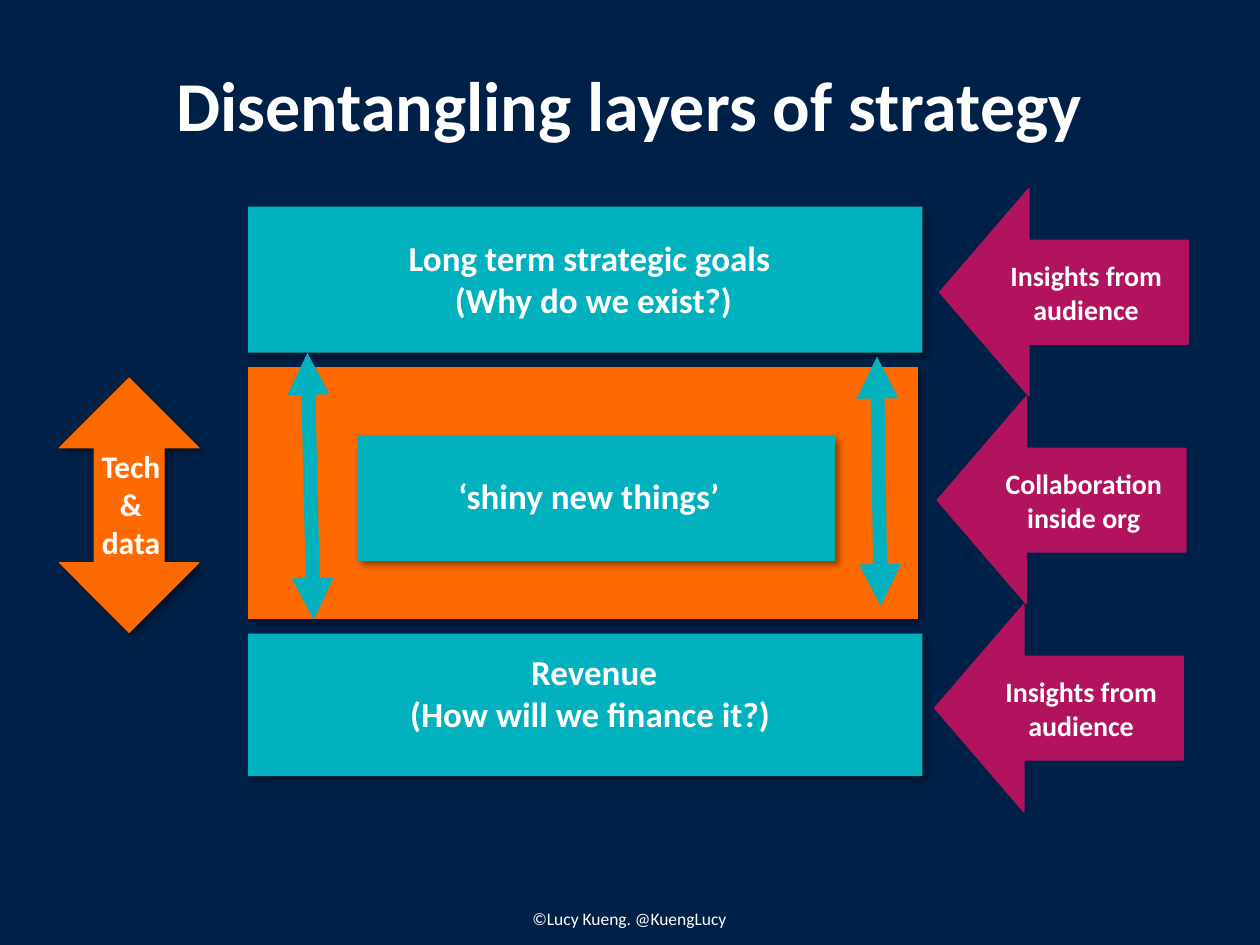
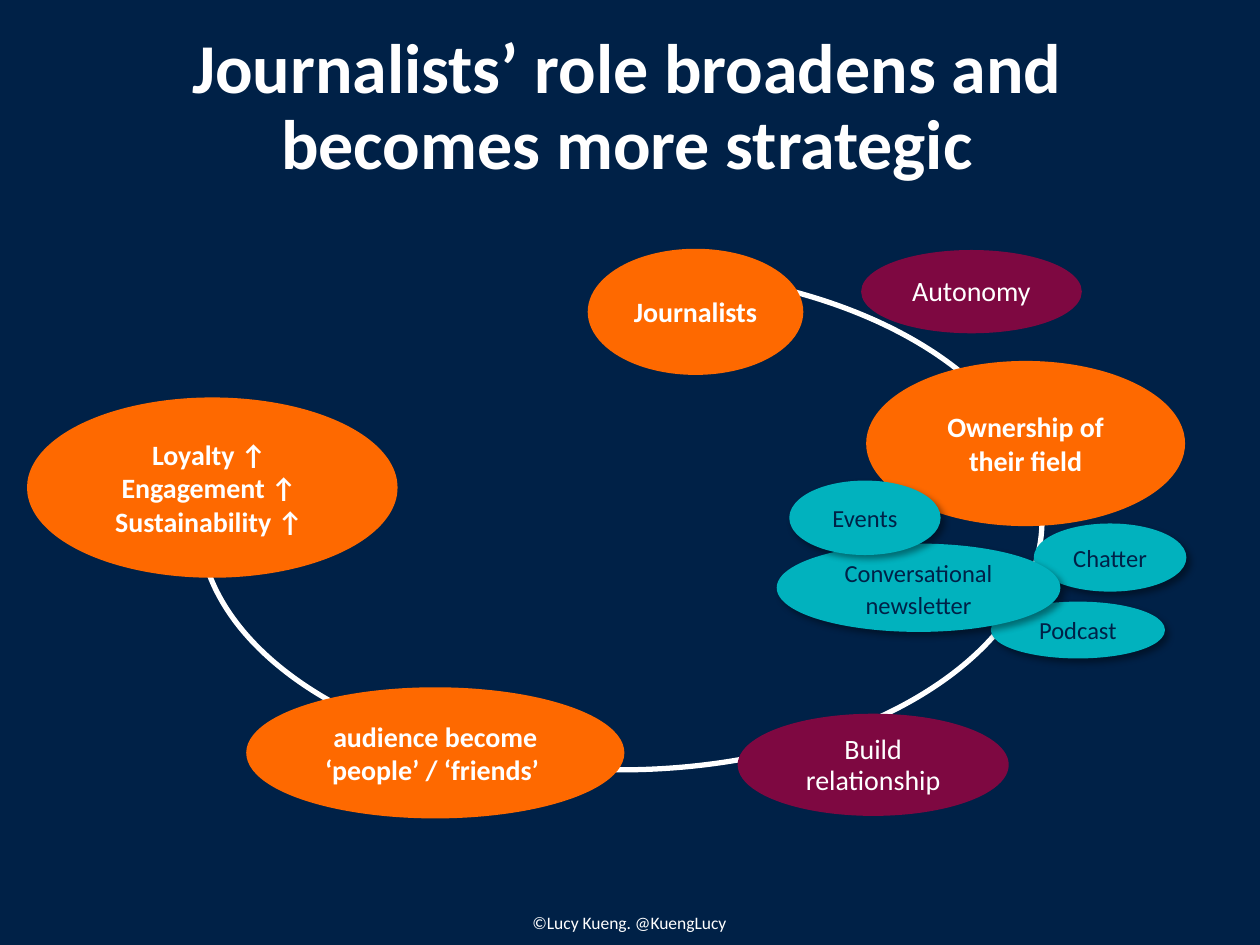
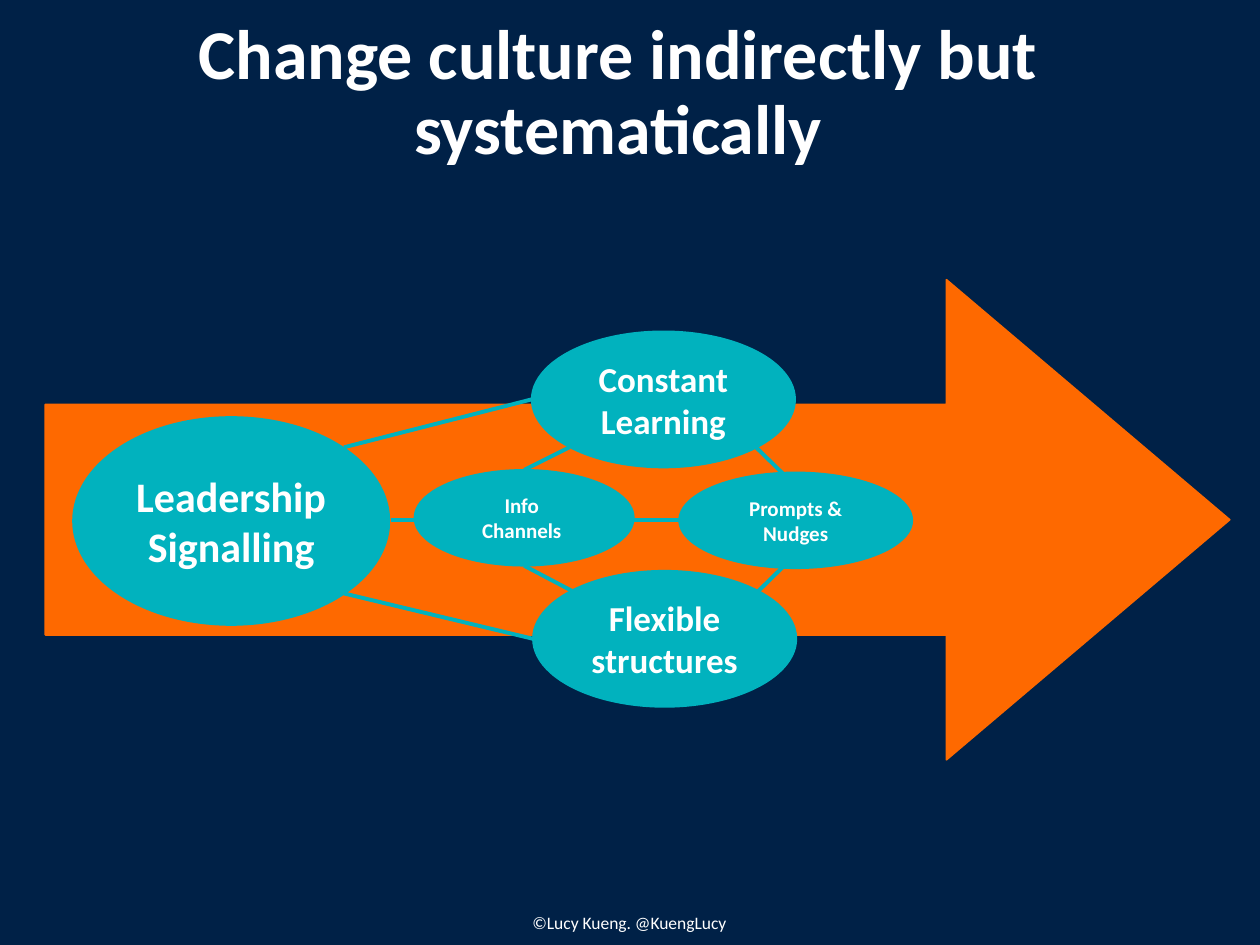
from dataclasses import dataclass
from typing import NamedTuple, Optional, Union

from lxml.etree import SubElement
from pptx import Presentation
from pptx.dml.color import RGBColor
from pptx.enum.shapes import MSO_CONNECTOR, MSO_SHAPE
from pptx.enum.text import MSO_ANCHOR, MSO_AUTO_SIZE, PP_ALIGN
from pptx.oxml.ns import qn
from pptx.shapes.autoshape import Shape
from pptx.slide import Slide
from pptx.text.text import TextFrame
from pptx.util import Inches, Length, Pt

NAVY = RGBColor(0x00, 0x21, 0x47)
WHITE = RGBColor(0xFF, 0xFF, 0xFF)
ORANGE = RGBColor(0xFE, 0x69, 0x00)
TEAL = RGBColor(0x01, 0xB2, 0xBE)
MAGENTA = RGBColor(0xB2, 0x13, 0x5F)
PLUM = RGBColor(0x7E, 0x08, 0x41)

FONT = "Calibri"
SLIDE_WIDTH, SLIDE_HEIGHT = Inches(10), Inches(7.5)
CELL = SLIDE_WIDTH // 100
ARC_DEGREE = 0.6
FOOTER = "©Lucy Kueng. @KuengLucy"


class Box(NamedTuple):
    """A place on the grid of 100 columns and 75 rows."""

    column: float
    row: float
    columns: float
    rows: float

    def lengths(self) -> tuple[int, ...]:
        """Return left, top, width and height as slide lengths."""
        return tuple(round(value * CELL) for value in self)


class Link(NamedTuple):
    """A straight line between two grid points."""

    start_column: float
    start_row: float
    end_column: float
    end_row: float


@dataclass(frozen=True)
class TextStyle:
    """The look of a block of centred text."""

    size: float
    bold: bool = True
    color: RGBColor = WHITE
    spacing: Optional[Union[float, Length]] = None


@dataclass(frozen=True)
class ShapeStyle:
    """The fill, outline and shadow of a preset shape."""

    fill: RGBColor
    line_width: float = 0
    shadow: bool = False


@dataclass(frozen=True)
class Node:
    """A preset shape with its place, look and text."""

    box: Box
    style: ShapeStyle
    lines: tuple[str, ...] = ()
    text: TextStyle = TextStyle(16)
    preset: MSO_SHAPE = MSO_SHAPE.OVAL
    adjustments: tuple[float, ...] = ()


TITLE_TEXT = TextStyle(40, spacing=0.9)
FOOTER_TEXT = TextStyle(10, bold=False)
LAYER_TEXT = TextStyle(20)
ROLE_TEXT = TextStyle(16, bold=False, spacing=Pt(18))
CHANNEL_TEXT = TextStyle(14, bold=False, color=NAVY)
NEWSLETTER_TEXT = TextStyle(14, bold=False, color=NAVY, spacing=Pt(18))

ORANGE_LAYER = ShapeStyle(ORANGE, 0.5, shadow=True)
TEAL_LAYER = ShapeStyle(TEAL, shadow=True)
TEAL_INSET = ShapeStyle(TEAL, 0.5, shadow=True)
INSIGHT = ShapeStyle(MAGENTA, 1)
STAGE = ShapeStyle(ORANGE, 2.25)
ROLE = ShapeStyle(PLUM, 2.25)
CHANNEL = ShapeStyle(TEAL, 2.25, shadow=True)
DIRECTION = ShapeStyle(ORANGE, 1)
LEVER = ShapeStyle(TEAL, 1)


def write_text(frame: TextFrame, lines: tuple[str, ...], style: TextStyle) -> None:
    """Write each line as a centred paragraph."""
    for index, line in enumerate(lines):
        paragraph = frame.add_paragraph() if index else frame.paragraphs[0]
        paragraph.alignment = PP_ALIGN.CENTER
        if style.spacing is not None:
            paragraph.line_spacing = style.spacing
        run = paragraph.add_run()
        run.text = line
        run.font.name = FONT
        run.font.size = Pt(style.size)
        run.font.bold = style.bold
        run.font.color.rgb = style.color


def add_shadow(shape: Shape) -> None:
    """Cast a soft black shadow to the lower right."""
    effects = shape._element.spPr.find(qn("a:effectLst"))
    shadow = SubElement(effects, qn("a:outerShdw"), blurRad=str(Pt(4)), dist=str(Pt(3)),
                        dir="2700000", algn="tl", rotWithShape="0")
    color = SubElement(shadow, qn("a:srgbClr"), val="000000")
    SubElement(color, qn("a:alpha"), val="40000")


def add_node(slide: Slide, node: Node) -> None:
    """Draw a preset shape and its text."""
    shape = slide.shapes.add_shape(node.preset, *node.box.lengths())
    for index, value in enumerate(node.adjustments):
        shape.adjustments[index] = value
    shape.shadow.inherit = False
    shape.fill.solid()
    shape.fill.fore_color.rgb = node.style.fill
    if node.style.line_width:
        shape.line.color.rgb = node.style.fill
        shape.line.width = Pt(node.style.line_width)
    else:
        shape.line.fill.background()
    if node.style.shadow:
        add_shadow(shape)
    shape.text_frame.vertical_anchor = MSO_ANCHOR.MIDDLE
    write_text(shape.text_frame, node.lines, node.text)


def add_label(slide: Slide, box: Box, lines: tuple[str, ...], style: TextStyle,
              wrap: bool = True) -> None:
    """Place a text box."""
    frame = slide.shapes.add_textbox(*box.lengths()).text_frame
    frame.word_wrap = wrap
    write_text(frame, lines, style)


def add_link(slide: Slide, link: Link, width: float, arrows: bool = False) -> None:
    """Draw a teal line, with arrowheads at both ends if asked."""
    ends = (round(value * CELL) for value in link)
    connector = slide.shapes.add_connector(MSO_CONNECTOR.STRAIGHT, *ends)
    connector.line.color.rgb = TEAL
    connector.line.width = Pt(width)
    if arrows:
        outline = connector.line._get_or_add_ln()
        for end in ("a:headEnd", "a:tailEnd"):
            SubElement(outline, qn(end), type="triangle")
    SubElement(connector._element.spPr, qn("a:effectLst"))


def start_slide(presentation: Presentation, title: str, box: Box, footer_row: float = 71.9,
                anchor: MSO_ANCHOR = MSO_ANCHOR.MIDDLE) -> Slide:
    """Add a slide with its title and footer."""
    slide = presentation.slides.add_slide(presentation.slide_layouts.get_by_name("Title Only"))
    heading = slide.shapes.title
    heading.left, heading.top, heading.width, heading.height = box.lengths()
    frame = heading.text_frame
    frame.auto_size = MSO_AUTO_SIZE.NONE
    frame.word_wrap = True
    frame.vertical_anchor = anchor
    write_text(frame, (title,), TITLE_TEXT)
    add_label(slide, Box(41.1, footer_row, 17.7, 2.7), (FOOTER,), FOOTER_TEXT, wrap=False)
    return slide


def build_layers(presentation: Presentation) -> None:
    """Show the strategy layers and what feeds them."""
    slide = start_slide(presentation, "Disentangling layers of strategy",
                        Box(4.4, 4.4, 91.1, 8.5), footer_row=71.6)
    layers = (
        Node(Box(4.7, 30, 11.1, 20.2), ORANGE_LAYER, preset=MSO_SHAPE.UP_DOWN_ARROW),
        Node(Box(19.7, 29.2, 53.1, 19.9), ORANGE_LAYER, preset=MSO_SHAPE.RECTANGLE),
        Node(Box(19.7, 16.4, 53.5, 11.6), TEAL_LAYER, preset=MSO_SHAPE.RECTANGLE),
        Node(Box(28.4, 34.6, 37.8, 9.9), TEAL_INSET, preset=MSO_SHAPE.RECTANGLE),
        Node(Box(19.7, 50.3, 53.5, 11.3), TEAL_LAYER, preset=MSO_SHAPE.RECTANGLE),
    )
    for layer in layers:
        add_node(slide, layer)
    labels = (
        (Box(17.9, 18.3, 58.4, 7.7), ("Long term strategic goals ", "(Why do we exist?)"), LAYER_TEXT),
        (Box(21, 37.2, 52.1, 4.4), ("‘shiny new things’ ",), LAYER_TEXT),
        (Box(18, 51.1, 58.3, 7.7), ("Revenue", "(How will we finance it?) "), LAYER_TEXT),
        (Box(4.5, 35, 11.8, 10.1), ("Tech", "&", "data"), TextStyle(18)),
    )
    for box, lines, style in labels:
        add_label(slide, box, lines, style)
    for link in (Link(24.4, 28, 24.9, 49.2), Link(69.6, 28.3, 69.9, 48.1)):
        add_link(slide, link, 8, arrows=True)
    insights = ("Insights from audience", "Collaboration inside org", "Insights from audience")
    for index, insight in enumerate(insights):
        box = Box(74.6 - 0.2 * index, 15 + 16.5 * index, 19.7, 16.4)
        add_node(slide, Node(box, INSIGHT, (insight,), preset=MSO_SHAPE.LEFT_ARROW,
                             adjustments=(0.5, 0.43)))


def add_journey_arc(slide: Slide) -> None:
    """Draw the open curve that joins the stages."""
    arc = slide.shapes.add_shape(MSO_SHAPE.ARC, *Box(15.8, 21.4, 66.9, 39.7).lengths())
    arc.adjustments[0] = 270 * ARC_DEGREE
    arc.adjustments[1] = 185.68 * ARC_DEGREE
    arc.shadow.inherit = False
    arc.fill.background()
    arc.line.color.rgb = WHITE
    arc.line.width = Pt(3)


def build_journey(presentation: Presentation) -> None:
    """Show the journey from journalists to loyal audiences."""
    slide = start_slide(presentation, "Journalists’ role broadens and becomes more strategic",
                        Box(4.2, 4.4, 91.1, 8.5))
    add_journey_arc(slide)
    nodes = (
        Node(Box(58.7, 56.8, 21.2, 7.8), ROLE, ("Build relationship",), ROLE_TEXT),
        Node(Box(46.8, 19.9, 16.8, 9.7), STAGE, ("Journalists",)),
        Node(Box(78.8, 47.9, 13.5, 4.2), CHANNEL, ("Podcast",), CHANNEL_TEXT),
        Node(Box(2.3, 31.7, 29.1, 14), STAGE, ("Loyalty ↑ ", "Engagement ↑ ", "Sustainability ↑ ")),
        Node(Box(19.7, 54.7, 29.7, 10.1), STAGE, ("audience become ‘people’ / ‘friends’ ",)),
        Node(Box(68.9, 28.8, 25, 12.8), STAGE, ("Ownership of their field",)),
        Node(Box(82.2, 41.7, 11.8, 5.1), CHANNEL, ("Chatter",), CHANNEL_TEXT),
        Node(Box(61.8, 43.3, 22.2, 6.7), CHANNEL, ("Conversational newsletter",), NEWSLETTER_TEXT),
        Node(Box(62.8, 38.3, 11.7, 5.6), CHANNEL, ("Events",), CHANNEL_TEXT),
        Node(Box(68.5, 20, 17.2, 6.3), ROLE, ("Autonomy",), ROLE_TEXT),
    )
    for node in nodes:
        add_node(slide, node)


def build_culture(presentation: Presentation) -> None:
    """Show the linked levers that move culture forward."""
    slide = start_slide(presentation, "Change culture indirectly but systematically",
                        Box(0, 1, 98.1, 9.3), anchor=MSO_ANCHOR.TOP)
    add_node(slide, Node(Box(3.6, 22.2, 94, 38.1), DIRECTION, preset=MSO_SHAPE.RIGHT_ARROW,
                         adjustments=(0.48, 0.59)))
    links = (
        Link(31, 41.3, 53.9, 41.3),
        Link(27.3, 35.5, 42.2, 31.7),
        Link(27.3, 47.1, 42.3, 50.7),
        Link(60, 35.5, 64.5, 39.9),
        Link(45.2, 35.5, 41.6, 37.3),
        Link(41.6, 44.9, 45.4, 46.9),
        Link(60.2, 46.9, 65.4, 41.8),
    )
    for link in links:
        add_link(slide, link, 2.25)
    levers = (
        Node(Box(42.2, 26.3, 20.9, 10.8), LEVER, ("Constant Learning",), TextStyle(20)),
        Node(Box(5.8, 33.1, 25.1, 16.5), LEVER, ("Leadership", "Signalling"), TextStyle(24)),
        Node(Box(42.3, 45.3, 20.9, 10.8), LEVER, ("Flexible structures",), TextStyle(20)),
        Node(Box(32.9, 37.3, 17.4, 7.6), LEVER, ("Info ", "Channels "), TextStyle(12)),
        Node(Box(53.9, 37.5, 18.5, 7.6), LEVER, ("Prompts & Nudges",), TextStyle(12)),
    )
    for lever in levers:
        add_node(slide, lever)


def main() -> None:
    """Build and save the presentation."""
    presentation = Presentation()
    presentation.slide_width, presentation.slide_height = SLIDE_WIDTH, SLIDE_HEIGHT
    background = presentation.slide_master.background.fill
    background.solid()
    background.fore_color.rgb = NAVY
    build_layers(presentation)
    build_journey(presentation)
    build_culture(presentation)
    presentation.save("out.pptx")


if __name__ == "__main__":
    main()
